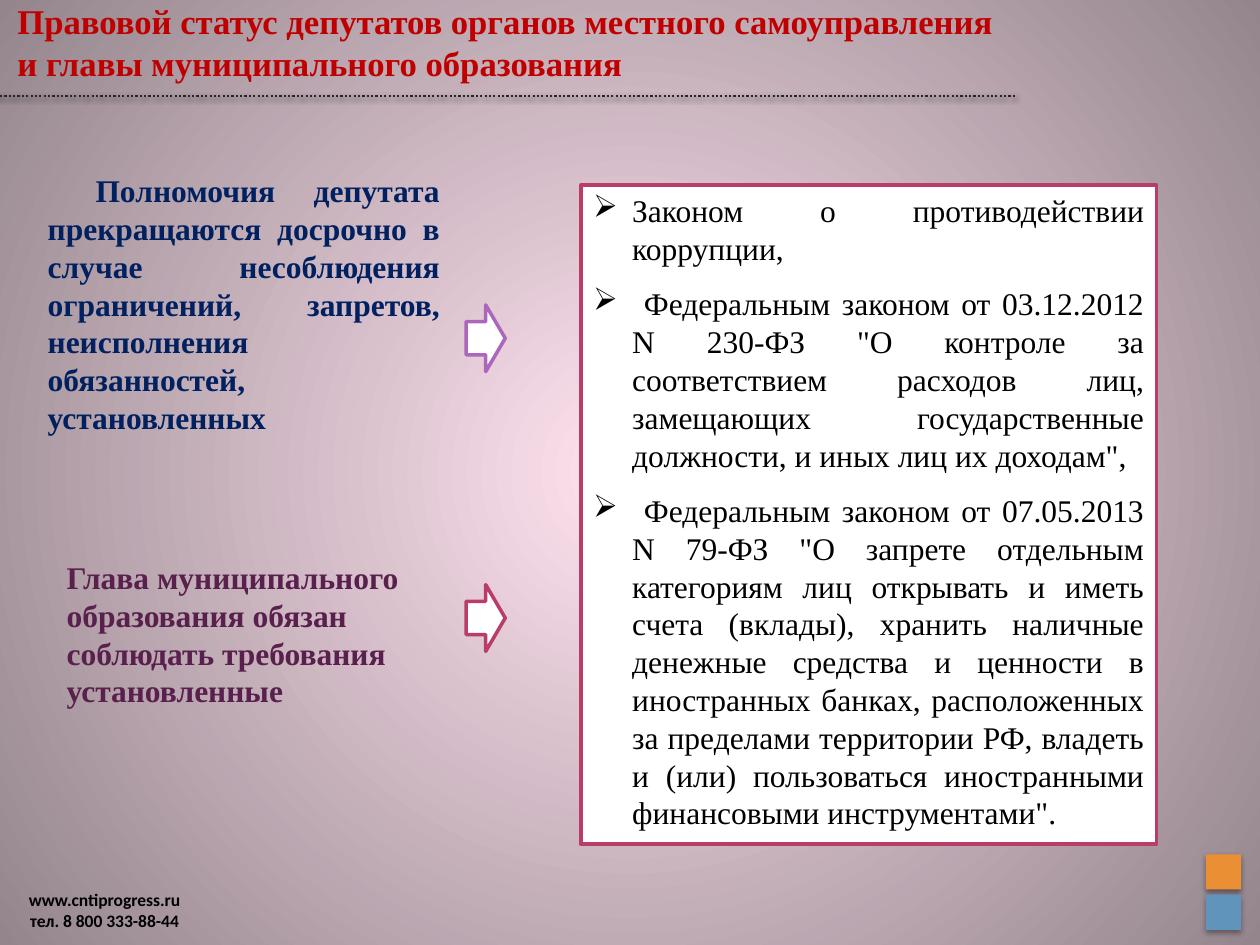
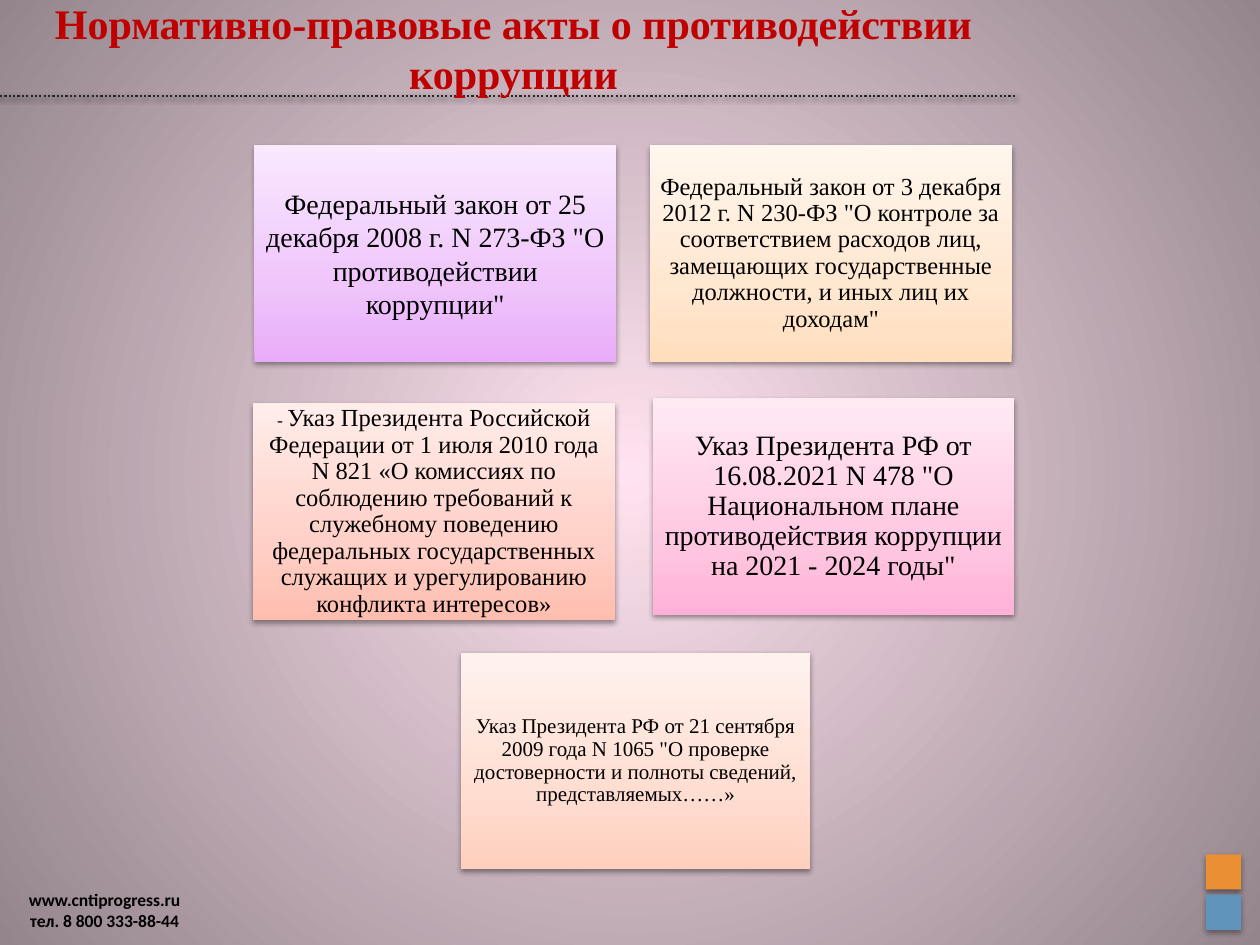
from pptx import Presentation
from pptx.dml.color import RGBColor
from pptx.enum.dml import MSO_LINE
from pptx.enum.shapes import MSO_CONNECTOR, MSO_SHAPE as SHAPE
from pptx.enum.text import MSO_ANCHOR as ANCHOR, PP_ALIGN as ALIGN
from pptx.oxml import parse_xml
from pptx.oxml.ns import nsdecls, qn
from pptx.util import Inches, Pt

BLACK = RGBColor(0x00, 0x00, 0x00)
WHITE = RGBColor(0xFF, 0xFF, 0xFF)
DARK = RGBColor(0x26, 0x26, 0x26)
RED = RGBColor(0xC0, 0x00, 0x00)
NAVY = RGBColor(0x00, 0x20, 0x60)
PLUM = RGBColor(0x59, 0x1F, 0x4D)
LILAC = RGBColor(0xAC, 0x66, 0xBB)
CRIMSON = RGBColor(0xB8, 0x3D, 0x68)
ORANGE = RGBColor(0xEB, 0x8F, 0x35)
BLUE = RGBColor(0x61, 0x94, 0xBB)


def rgbs(*codes):
    return [RGBColor.from_string(code) for code in codes]


BACKDROP = rgbs("FFE3F0", "94858C")
VIOLET_FADE = rgbs("E9ACFA", "EFC5FB", "F9E8FE")
CORAL_FADE = rgbs("FFBDAF", "FFD0C7", "FFEDEA")
SAND_FADE = rgbs("FFDEBC", "FFE7D0", "FFF6ED")
PINK_FADE = rgbs("FFB1D7", "FFC8E2", "FFEAF4")
PEACH_FADE = rgbs("FFCFBD", "FFDDD1", "FFF2EE")

SERIF = "Times New Roman"
SANS = "Calibri"
UPWARD = '<a:lin %s ang="16200000" scaled="0"/>'
FROM_CENTRE = ('<a:path %s path="circle"><a:fillToRect l="50000" t="50000" '
               'r="50000" b="50000"/></a:path>')


# Formatting helpers
def apply(obj, **values):
    for name, value in values.items():
        setattr(obj, name, value)


def set_gradient(fill, root, colours, positions, direction):
    fill.gradient()
    grad = next(root.iter(qn("a:gradFill")))
    for child in list(grad):
        grad.remove(child)
    stops = "".join(f'<a:gs pos="{pos * 1000}"><a:srgbClr val="{c}"/></a:gs>'
                    for c, pos in zip(colours, positions))
    grad.append(parse_xml(f'<a:gsLst {nsdecls("a")}>{stops}</a:gsLst>'))
    grad.append(parse_xml(direction % nsdecls("a")))


def add_shadow(sp, alpha, dist=1.6):
    """Soft shadow straight below; call after fill and line are set."""
    spPr = sp._element.spPr
    for old in spPr.findall(qn("a:effectLst")):
        spPr.remove(old)
    spPr.append(parse_xml(
        f'<a:effectLst {nsdecls("a")}><a:outerShdw blurRad="{Pt(3.1)}" '
        f'dist="{Pt(dist)}" dir="5400000" rotWithShape="0">'
        f'<a:srgbClr val="000000"><a:alpha val="{alpha * 1000}"/></a:srgbClr>'
        '</a:outerShdw></a:effectLst>'))


def add_figure(s, kind, box, fill=None, line=None):
    sp = s.shapes.add_shape(kind, *map(Inches, box))
    sp.shadow.inherit = False
    if fill is not None:
        sp.fill.solid()
        sp.fill.fore_color.rgb = fill
    if line is None:
        sp.line.fill.background()
    else:
        sp.line.color.rgb = line
        sp.line.width = Pt(2)
    return sp


def add_run(p, text, size, colour=BLACK, bold=False, name=SERIF):
    r = p.add_run()
    r.text = text
    apply(r.font, size=Pt(size), bold=bold, name=name)
    r.font.color.rgb = colour


def add_text(s, box, lines, size, colour=BLACK, bold=True, name=SERIF,
             align=ALIGN.LEFT, **frame):
    tf = s.shapes.add_textbox(*map(Inches, box)).text_frame
    apply(tf, word_wrap=True, **frame)
    for i, line in enumerate(lines):
        p = tf.paragraphs[0] if i == 0 else tf.add_paragraph()
        p.alignment = align
        add_run(p, line, size, colour, bold, name)
    return tf


# Parts shared by the slides
def add_base(prs, title, size, align, anchor):
    s = prs.slides.add_slide(prs.slide_layouts[6])
    # Corner squares
    for top, colour, alpha in ((6.78, ORANGE, 40), (7.1, BLUE, 35)):
        square = add_figure(s, SHAPE.RECTANGLE, (9.57, top, 0.28, 0.28), colour)
        add_shadow(square, alpha, 1.8)
    # Dotted rule under the title
    rule = s.shapes.add_connector(MSO_CONNECTOR.STRAIGHT, 0, Inches(0.76),
                                  Inches(8.07), Inches(0.76))
    apply(rule.line, width=Pt(1.25), dash_style=MSO_LINE.ROUND_DOT)
    rule.line.color.rgb = DARK
    add_shadow(rule, 38)
    # Contacts and title
    add_text(s, (0, 7.01, 1.66, 0.44),
             ["www.cntiprogress.ru", "тел. 8 800 333-88-44"],
             10, name=SANS, align=ALIGN.CENTER)
    add_text(s, (0.04, 0, 8.07, 0.76), title, size, RED, align=align,
             vertical_anchor=anchor, margin_top=0, margin_bottom=0)
    return s


# Slide 1
def add_law_list(s, box, laws):
    tf = add_figure(s, SHAPE.RECTANGLE, box, WHITE, CRIMSON).text_frame
    apply(tf, word_wrap=True, vertical_anchor=ANCHOR.TOP)
    for i, law in enumerate(laws):
        p = tf.paragraphs[0] if i == 0 else tf.add_paragraph()
        p.alignment = ALIGN.JUSTIFY
        if i:
            p.space_before = Pt(10)
        pPr = p._p.get_or_add_pPr()
        pPr.set("marL", str(Inches(0.31)))
        pPr.set("indent", str(Inches(-0.31)))
        pPr.append(parse_xml(f'<a:buChar {nsdecls("a")} char="➢"/>'))
        add_run(p, law, 18)


def build_status_slide(prs):
    s = add_base(prs, ["Правовой статус депутатов органов местного самоуправления",
                       "и главы муниципального образования"],
                 19.8, ALIGN.LEFT, ANCHOR.TOP)
    add_law_list(s, (4.61, 1.47, 4.57, 5.23), [
        "Законом о противодействии коррупции,",
        " Федеральным законом от 03.12.2012 N 230-ФЗ \"О контроле за "
        "соответствием расходов лиц, замещающих государственные должности, "
        "и иных лиц их доходам\",",
        " Федеральным законом от 07.05.2013 N 79-ФЗ \"О запрете отдельным "
        "категориям лиц открывать и иметь счета (вклады), хранить наличные "
        "денежные средства и ценности в иностранных банках, расположенных за "
        "пределами территории РФ, владеть и (или) пользоваться иностранными "
        "финансовыми инструментами\"."])
    # Who must comply
    deputy = add_text(s, (0.28, 1.31, 3.31, 2.22), [
        "Полномочия депутата прекращаются досрочно в случае несоблюдения "
        "ограничений, запретов, неисполнения обязанностей, установленных"],
        18, NAVY, align=ALIGN.JUSTIFY)
    deputy.paragraphs[0]._p.get_or_add_pPr().set("indent", str(Inches(0.38)))
    add_text(s, (0.43, 4.38, 3.15, 1.31), [
        "Глава муниципального образования обязан соблюдать требования "
        "установленные"], 18, PLUM)
    for top, colour in ((2.42, LILAC), (4.64, CRIMSON)):
        add_figure(s, SHAPE.RIGHT_ARROW, (3.7, top, 0.31, 0.53), WHITE, colour)


# Slide 2
def add_act_card(s, box, fade, text, size, inset, spacing=0.9, dash=""):
    sp = add_figure(s, SHAPE.RECTANGLE, box)
    set_gradient(sp.fill, sp._element.spPr, fade, (0, 35, 100), UPWARD)
    add_shadow(sp, 38)
    tf = sp.text_frame
    apply(tf, word_wrap=True, vertical_anchor=ANCHOR.MIDDLE)
    for side in ("left", "right", "top", "bottom"):
        setattr(tf, f"margin_{side}", Inches(inset))
    p = tf.paragraphs[0]
    apply(p, alignment=ALIGN.CENTER, line_spacing=spacing)
    if dash:
        add_run(p, dash, 10)
    add_run(p, text, size)


def build_acts_slide(prs):
    s = add_base(prs, ["Нормативно-правовые акты о противодействии коррупции"],
                 24, ALIGN.CENTER, ANCHOR.MIDDLE)
    wide, high = 2.87, 1.72
    add_act_card(s, (2.02, 1.15, wide, high), VIOLET_FADE,
                 "Федеральный закон от 25 декабря 2008 г. N 273-ФЗ "
                 "\"О противодействии коррупции\"", 16, 0.07, spacing=1.0)
    add_act_card(s, (2.01, 3.2, wide, high), CORAL_FADE,
                 "Указ Президента Российской Федерации от 1 июля 2010 года "
                 "N 821 «О комиссиях по соблюдению требований к служебному "
                 "поведению федеральных государственных служащих и "
                 "урегулированию конфликта интересов»", 14, 0.04, dash="- ")
    add_act_card(s, (5.16, 1.15, wide, high), SAND_FADE,
                 "Федеральный закон от 3 декабря 2012 г. N 230-ФЗ \"О контроле "
                 "за соответствием расходов лиц, замещающих государственные "
                 "должности, и иных лиц их доходам\"", 14, 0.06)
    add_act_card(s, (5.18, 3.16, wide, high), PINK_FADE,
                 "Указ Президента РФ от 16.08.2021 N 478 \"О Национальном плане "
                 "противодействия коррупции на 2021 - 2024 годы\"", 16, 0.07)
    add_act_card(s, (3.66, 5.18, 2.77, high), PEACH_FADE,
                 "Указ Президента РФ от 21 сентября 2009 года N 1065 \"О проверке "
                 "достоверности и полноты сведений, представляемых……»", 12, 0.05)


def main():
    prs = Presentation()
    apply(prs, slide_width=Inches(10), slide_height=Inches(7.5))
    master = prs.slide_master
    set_gradient(master.background.fill, master._element, BACKDROP, (0, 100),
                 FROM_CENTRE)
    build_status_slide(prs)
    build_acts_slide(prs)
    prs.save("out.pptx")


if __name__ == "__main__":
    main()
